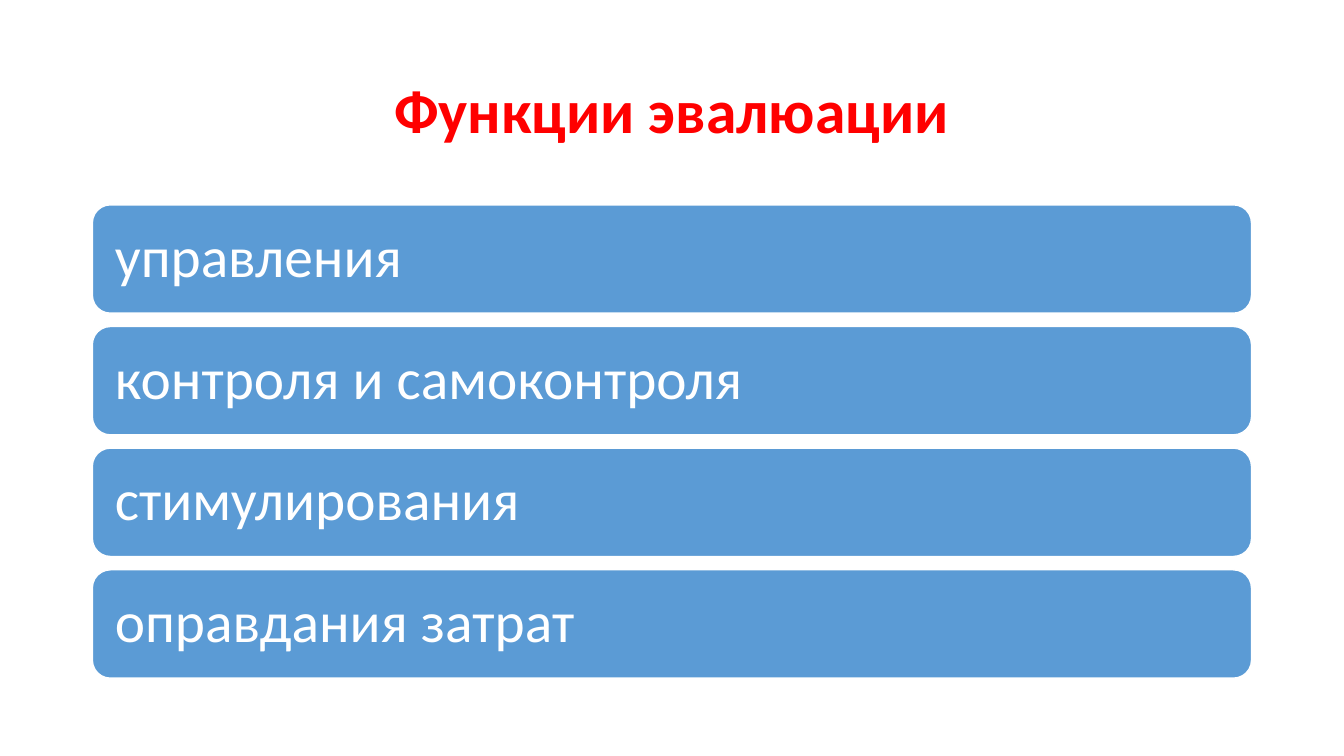
import pptx
import pptx.util
import pptx.dml.color
import pptx.enum.shapes
import pptx.enum.text

Pt = pptx.util.Pt
ALIGN = pptx.enum.text.PP_ALIGN

COLOURS = {"title": "FF0000", "bar": "5B9BD5", "light": "FFFFFF"}
FONT = "Calibri"
LEFT, WIDTH = 66, 828
BAR_TOP, BAR_HEIGHT, BAR_PITCH = 146.3, 77.4, 86.9
FUNCTIONS = [
    "управления",
    "контроля и самоконтроля",
    "стимулирования",
    "оправдания затрат",
]


def colour(name):
    return pptx.dml.color.RGBColor.from_string(COLOURS[name])


def write_text(shape, text, size, colour_name, bold=False, align=ALIGN.LEFT):
    frame = shape.text_frame
    frame.word_wrap = True
    frame.auto_size = pptx.enum.text.MSO_AUTO_SIZE.NONE
    frame.vertical_anchor = pptx.enum.text.MSO_ANCHOR.MIDDLE
    paragraph = frame.paragraphs[0]
    paragraph.alignment = align
    paragraph.line_spacing = 0.9
    run = paragraph.add_run()
    run.text = text
    run.font.name = FONT
    run.font.size = Pt(size)
    run.font.bold = bold
    run.font.color.rgb = colour(colour_name)


def set_title(slide, text):
    title = slide.shapes.title
    title.left, title.top = Pt(LEFT), Pt(28.75)
    title.width, title.height = Pt(WIDTH), Pt(104.4)
    write_text(title, text, size=44, colour_name="title", bold=True, align=ALIGN.CENTER)


def add_bar(slide, text, top):
    bar = slide.shapes.add_shape(
        pptx.enum.shapes.MSO_SHAPE.ROUNDED_RECTANGLE,
        Pt(LEFT), Pt(top), Pt(WIDTH), Pt(BAR_HEIGHT))
    bar.shadow.inherit = False
    bar.fill.solid()
    bar.fill.fore_color.rgb = colour("bar")
    bar.line.color.rgb = colour("light")
    bar.line.width = Pt(1)
    frame = bar.text_frame
    frame.margin_left = frame.margin_right = Pt(12.3)
    frame.margin_top = frame.margin_bottom = Pt(0)
    write_text(bar, text, size=41, colour_name="light")


def main():
    presentation = pptx.Presentation()
    presentation.slide_width, presentation.slide_height = Pt(960), Pt(540)
    slide = presentation.slides.add_slide(presentation.slide_layouts[5])

    # Title
    set_title(slide, "Функции эвалюации")

    # Stacked bars, one for each function
    for index, text in enumerate(FUNCTIONS):
        add_bar(slide, text, top=BAR_TOP + index * BAR_PITCH)

    presentation.save("out.pptx")


if __name__ == "__main__":
    main()
